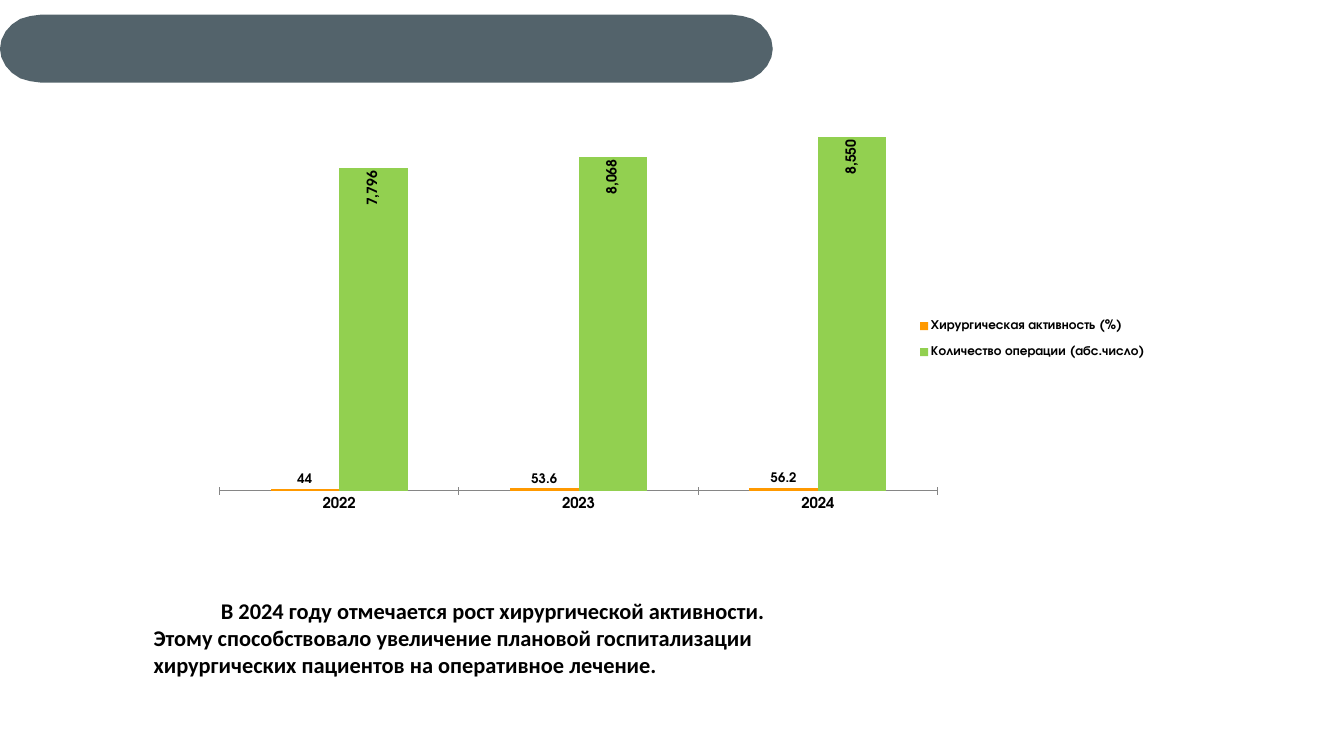
from math import cos, pi, sin

from lxml import etree
from pptx import Presentation
from pptx.chart.data import CategoryChartData
from pptx.dml.color import RGBColor
from pptx.enum.chart import XL_CHART_TYPE, XL_LABEL_POSITION, XL_LEGEND_POSITION, XL_TICK_MARK
from pptx.oxml import parse_xml
from pptx.oxml.ns import nsdecls, qn
from pptx.util import Pt

PX = 9525
BLANK_LAYOUT = 6

SLATE = RGBColor(0x41, 0x53, 0x5C)
ORANGE = RGBColor(0xFF, 0x99, 0x00)
GREEN = RGBColor(0x92, 0xD0, 0x50)
GREY = RGBColor(0x86, 0x86, 0x86)
BLACK = RGBColor(0, 0, 0)

COLUMNS = XL_CHART_TYPE.COLUMN_CLUSTERED
OUTSIDE, INSIDE = XL_LABEL_POSITION.OUTSIDE_END, XL_LABEL_POSITION.INSIDE_END
RIGHT = XL_LEGEND_POSITION.RIGHT
CROSS, NO_TICK = XL_TICK_MARK.CROSS, XL_TICK_MARK.NONE

TEXT_FONT, CHART_FONT = "Calibri", "TeX Gyre Adventor"
YEARS = ["2022", "2023", "2024"]
SERIES = [
    {"name": "Хирургическая активность (%)", "values": [44, 53.6, 56.2], "color": ORANGE,
     "labels": {"position": OUTSIDE, "number_format": "General"}, "size": 14, "rotation": 0},
    {"name": "Количество операции (абс.число)", "values": [7796, 8068, 8550], "color": GREEN,
     "labels": {"position": INSIDE, "number_format": "#,##0"}, "size": 15, "rotation": -90},
]
CONCLUSION = [
    "В 2024 году отмечается рост хирургической активности.",
    "Этому способствовало увеличение плановой госпитализации",
    "хирургических пациентов на оперативное лечение.",
]


def assign(target, values):
    for name, value in values.items():
        setattr(target, name, value)


def style_font(font, size, name):
    assign(font, {"size": Pt(size), "name": name, "bold": True})
    font.color.rgb = BLACK


def manual_layout(x, y, width, height, inner=False):
    """Return a c:layout element; lengths are shares of the chart area."""
    target = '<c:layoutTarget val="inner"/>' if inner else ""
    values = {"x": x, "y": y, "w": width, "h": height}
    sizes = "".join(f'<c:{key} val="{value}"/>' for key, value in values.items())
    return parse_xml(
        f'<c:layout {nsdecls("c")}><c:manualLayout>{target}'
        f'<c:xMode val="edge"/><c:yMode val="edge"/>{sizes}</c:manualLayout></c:layout>')


def replace_layout(parent, layout, position):
    for old in parent.findall(qn("c:layout")):
        parent.remove(old)
    parent.insert(position, layout)


class SlideBuilder:
    """Holds the style and the current slide; lengths are in px."""

    def __init__(self, presentation):
        self.slide = presentation.slides.add_slide(presentation.slide_layouts[BLANK_LAYOUT])

    def banner(self, left, top, width, height, corner, opacity):
        """Draw a bar whose ends are half ellipses, corner px wide."""
        radius, steps = height / 2, 12
        points = []
        for center, start in ((left + width - corner, -pi / 2), (left + corner, pi / 2)):
            for step in range(steps + 1):
                angle = start + pi * step / steps
                points.append((center + corner * cos(angle), top + radius + radius * sin(angle)))
        builder = self.slide.shapes.build_freeform(*points[0], scale=PX)
        builder.add_line_segments(points[1:], close=True)
        shape = builder.convert_to_shape()
        shape.shadow.inherit = False
        shape.line.fill.background()
        shape.fill.solid()
        shape.fill.fore_color.rgb = SLATE
        color = shape.fill._xPr.find(f".//{qn('a:srgbClr')}")
        etree.SubElement(color, qn("a:alpha"), val=str(opacity * 1000))

    def text(self, left, top, width, height, lines, size, indent):
        box = self.slide.shapes.add_textbox(left * PX, top * PX, width * PX, height * PX)
        frame = box.text_frame
        frame.word_wrap = True
        frame.text = "\n".join(lines)
        frame.paragraphs[0]._p.get_or_add_pPr().set("indent", str(indent * PX))
        for paragraph in frame.paragraphs:
            style_font(paragraph.font, size, TEXT_FONT)

    def column_chart(self, left, top, width, height, categories, series):
        data = CategoryChartData()
        data.categories = categories
        for entry in series:
            data.add_series(entry["name"], entry["values"])
        chart = self.slide.shapes.add_chart(
            COLUMNS, left * PX, top * PX, width * PX, height * PX, data).chart
        chart.has_title = False
        style_font(chart.font, 14, CHART_FONT)

        plot = chart.plots[0]
        assign(plot, {"gap_width": 150, "overlap": 0, "vary_by_categories": False})
        for item, entry in zip(plot.series, series):
            item.format.fill.solid()
            item.format.fill.fore_color.rgb = entry["color"]
            labels = item.data_labels
            assign(labels, {"show_value": True, "number_format_is_linked": False, **entry["labels"]})
            style_font(labels.font, entry["size"], CHART_FONT)
            body = labels._element.find(f".//{qn('a:bodyPr')}")
            body.set("rot", str(entry["rotation"] * 60000))
            body.set("vert", "horz")

        axis = chart.category_axis
        assign(axis, {"major_tick_mark": CROSS, "minor_tick_mark": NO_TICK})
        axis.format.line.color.rgb = GREY
        style_font(axis.tick_labels.font, 16, CHART_FONT)
        assign(chart.value_axis, {"visible": False, "has_major_gridlines": False,
                                  "minimum_scale": 0, "maximum_scale": 9000})

        chart.has_legend = True
        assign(chart.legend, {"position": RIGHT, "include_in_layout": False})
        style_font(chart.legend.font, 14, CHART_FONT)
        replace_layout(chart.legend._element, manual_layout(0.71, 0.48, 0.25, 0.16), 1)
        plot_area = chart._chartSpace.chart.plotArea
        replace_layout(plot_area, manual_layout(0.02, 0.02, 0.72, 0.91, inner=True), 0)


def main():
    presentation = Presentation()
    assign(presentation, {"slide_width": 1920 * PX, "slide_height": 1080 * PX})
    builder = SlideBuilder(presentation)
    builder.banner(0, 21, 1104, 97, corner=58, opacity=90)
    builder.text(210, 848, 1250, 203, CONCLUSION, size=24, indent=96)
    builder.column_chart(285, 157, 1425, 585, YEARS, SERIES)
    presentation.save("out.pptx")


if __name__ == "__main__":
    main()
